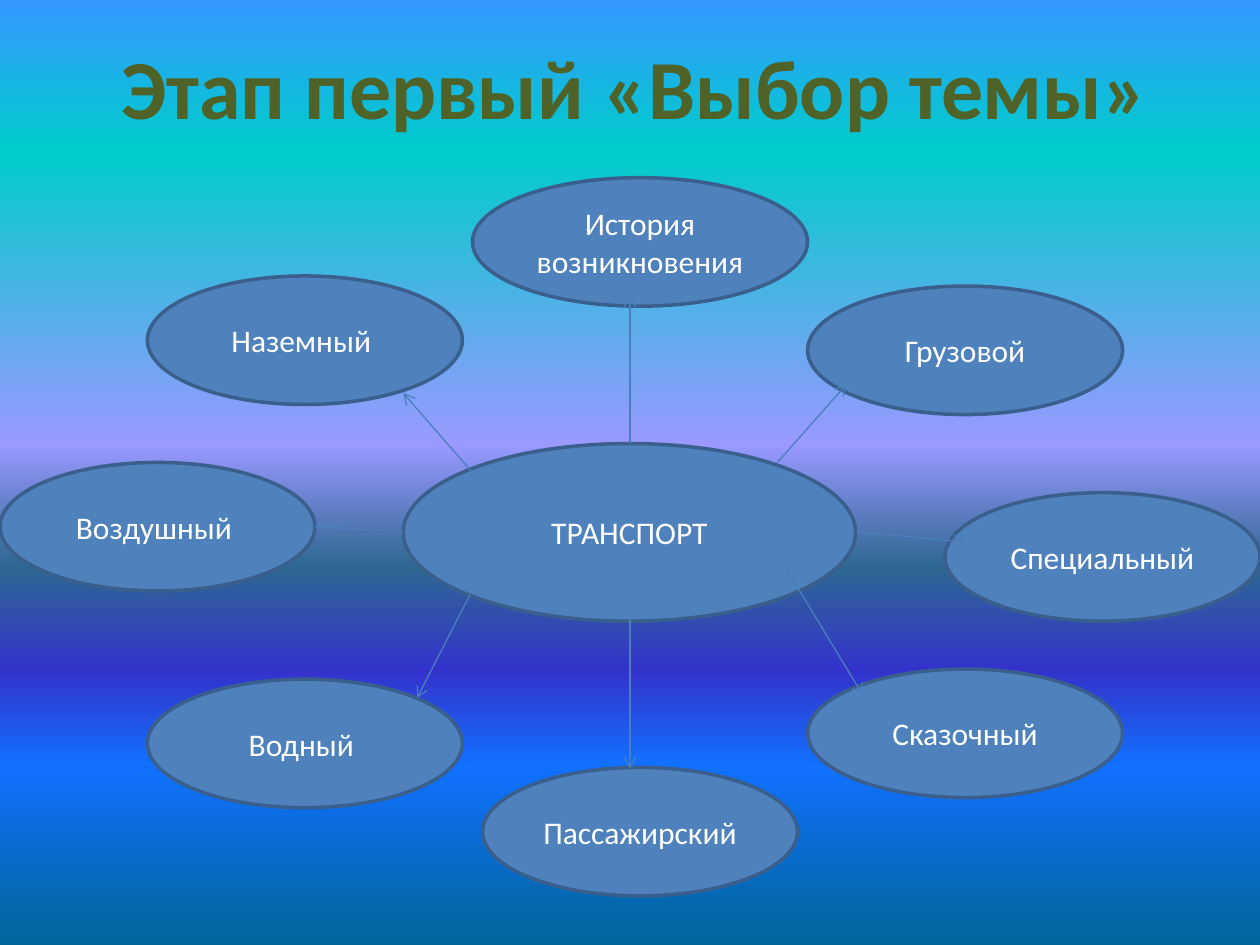
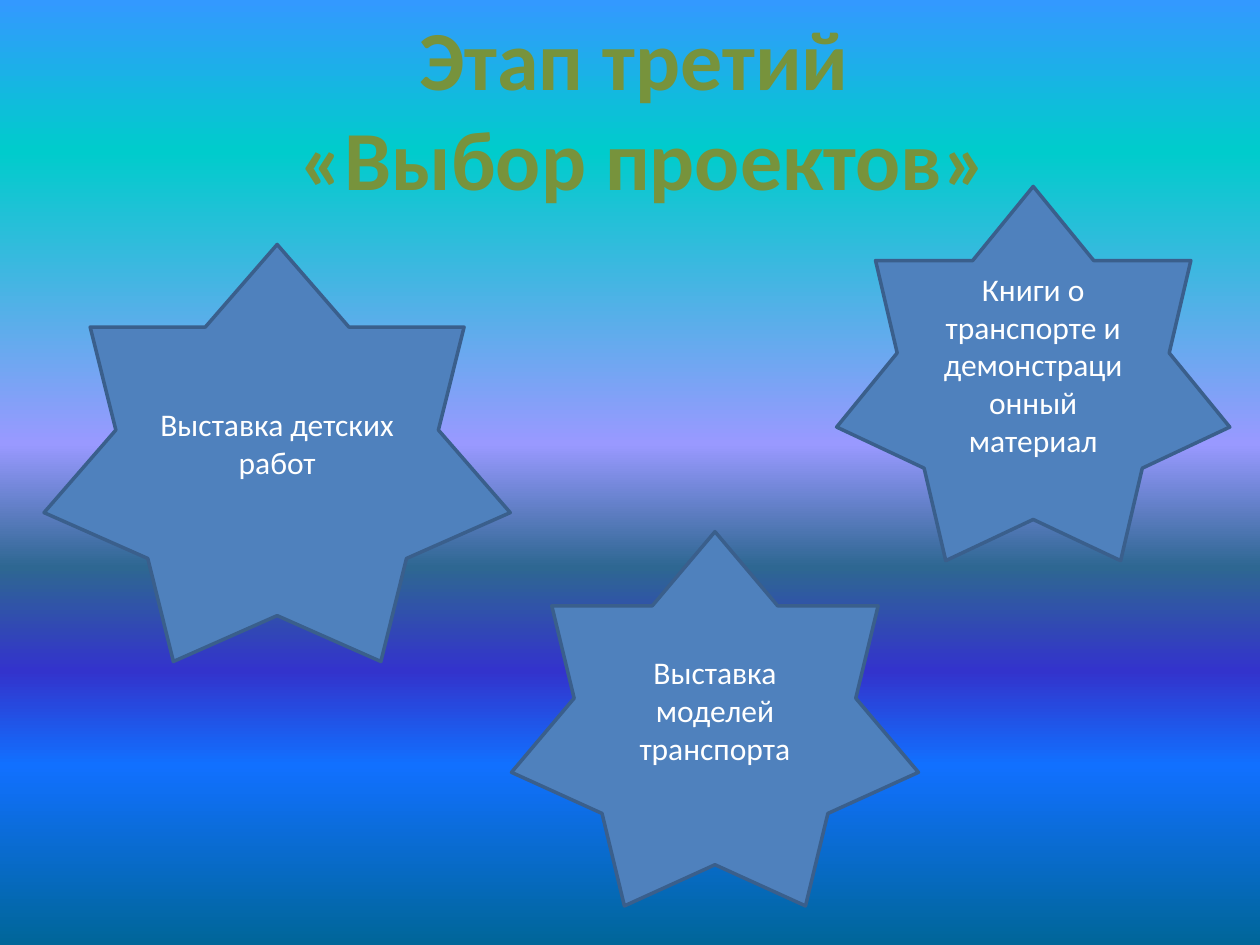
from dataclasses import dataclass

from lxml import etree
from pptx import Presentation
from pptx import util as u
from pptx.dml.color import RGBColor
from pptx.enum import shapes, text
from pptx.oxml.ns import qn

FONT = "Calibri"
SHAPE_FILL, SHAPE_LINE, SHAPE_TEXT = "4F81BD", "3A5F8C", "FFFFFF"
ARROW_COLOUR = "4B7EBC"
DARK_OLIVE, LIGHT_OLIVE = "4F6228", "77933C"
SKY_STOPS = (
    (0, "3399FF"), (16, "00CCCC"), (47, "9999FF"), (60, "2E6792"),
    (71, "3333CC"), (81, "1170FF"), (100, "006699"),
)
ELLIPSE = shapes.MSO_SHAPE.OVAL
STAR = shapes.MSO_SHAPE.STAR_7_POINT


@dataclass(frozen=True)
class Figure:
    label: str
    left: float
    top: float
    width: float = 2.5
    height: float = 1.02


@dataclass(frozen=True)
class Arrow:
    start: tuple[float, float]
    end: tuple[float, float]


TRANSPORT_TOPICS = (
    Figure("ТРАНСПОРТ", 3.2, 3.52, 3.59, 1.41),
    Figure("История возникновения", 3.75, 1.41, 2.66),
    Figure("Грузовой", 6.41, 2.27),
    Figure("Наземный ", 1.17, 2.19),
    Figure("Водный ", 1.17, 5.39),
    Figure("Сказочный", 6.41, 5.31),
    Figure("Пассажирский ", 3.83, 6.09),
    Figure("Воздушный ", 0, 3.67),
    Figure("Специальный", 7.5, 3.91),
)
TOPIC_ARROWS = (
    Arrow((5, 3.52), (5, 2.34)),
    Arrow((6.8, 4.22), (7.66, 4.3)),
    Arrow((5, 4.92), (5, 6.1)),
    Arrow((6.17, 3.67), (6.72, 3.05)),
    Arrow((6.25, 4.53), (6.85, 5.52)),
    Arrow((3.75, 3.75), (3.2, 3.12)),
    Arrow((3.2, 4.22), (2.5, 4.18)),
    Arrow((3.73, 4.72), (3.31, 5.54)),
)
PROJECTS = (
    Figure("Выставка детских работ", 0.35, 1.94, 3.7, 3.31),
    Figure("Книги о транспорте и демонстрационный материал", 6.64, 1.48, 3.12, 2.97),
    Figure("Выставка моделей транспорта", 4.06, 4.22, 3.23, 2.97),
)


def colour(value: str) -> RGBColor:
    return RGBColor.from_string(value)


def inches(*lengths: float) -> list[u.Length]:
    return [u.Inches(length) for length in lengths]


def write(frame, content: str, *, size: float, ink: str, bold: bool = False,
          anchor=text.MSO_ANCHOR.TOP) -> None:
    frame.word_wrap = True
    frame.vertical_anchor = anchor
    for index, line in enumerate(content.split("\n")):
        para = frame.add_paragraph() if index else frame.paragraphs[0]
        para.alignment = text.PP_ALIGN.CENTER
        span = para.add_run()
        span.text = line
        span.font.name = FONT
        span.font.size = u.Pt(size)
        span.font.bold = bold
        span.font.color.rgb = colour(ink)


def paint_sky(page) -> None:
    page.background.fill.gradient()
    gradient = page.element.find(".//" + qn("a:gradFill"))
    stops = gradient.find(qn("a:gsLst"))
    for stop in list(stops):
        stops.remove(stop)
    for percent, value in SKY_STOPS:
        stop = etree.SubElement(stops, qn("a:gs"), pos=str(percent * 1000))
        etree.SubElement(stop, qn("a:srgbClr"), val=value)
    gradient.find(qn("a:lin")).set("ang", str(90 * 60000))


def add_page(deck):
    page = deck.slides.add_slide(deck.slide_layouts[6])
    paint_sky(page)
    return page


def add_title(page, content: str, ink: str, left: float, top: float,
              width: float, height: float) -> None:
    box = page.shapes.add_textbox(*inches(left, top, width, height))
    write(box.text_frame, content, size=48, ink=ink, bold=True)


def add_figure(page, kind: shapes.MSO_SHAPE, figure: Figure) -> None:
    shape = page.shapes.add_shape(
        kind, *inches(figure.left, figure.top, figure.width, figure.height))
    shape.shadow.inherit = False
    shape.fill.solid()
    shape.fill.fore_color.rgb = colour(SHAPE_FILL)
    shape.line.color.rgb = colour(SHAPE_LINE)
    shape.line.width = u.Pt(2)
    write(shape.text_frame, figure.label, size=18, ink=SHAPE_TEXT,
          anchor=text.MSO_ANCHOR.MIDDLE)


def add_arrow(page, arrow: Arrow) -> None:
    connector = page.shapes.add_connector(
        shapes.MSO_CONNECTOR.STRAIGHT, *inches(*arrow.start, *arrow.end))
    connector.line.color.rgb = colour(ARROW_COLOUR)
    connector.line.width = u.Pt(0.75)
    properties = connector.element.spPr
    etree.SubElement(properties.find(qn("a:ln")), qn("a:tailEnd"), type="arrow")
    etree.SubElement(properties, qn("a:effectLst"))


def build_topic_page(deck) -> None:
    page = add_page(deck)
    for topic in TRANSPORT_TOPICS:
        add_figure(page, ELLIPSE, topic)
    for arrow in TOPIC_ARROWS:
        add_arrow(page, arrow)
    add_title(page, "Этап первый «Выбор темы»", DARK_OLIVE, -0.86, 0.23, 11.8, 0.91)


def build_project_page(deck) -> None:
    page = add_page(deck)
    for project in PROJECTS:
        add_figure(page, STAR, project)
    add_title(page, "Этап третий \n«Выбор проектов»", LIGHT_OLIVE, 0.62, 0, 8.98, 1.72)


def main() -> None:
    deck = Presentation()
    deck.slide_width, deck.slide_height = inches(10, 7.5)
    build_topic_page(deck)
    build_project_page(deck)
    deck.save("out.pptx")


if __name__ == "__main__":
    main()
